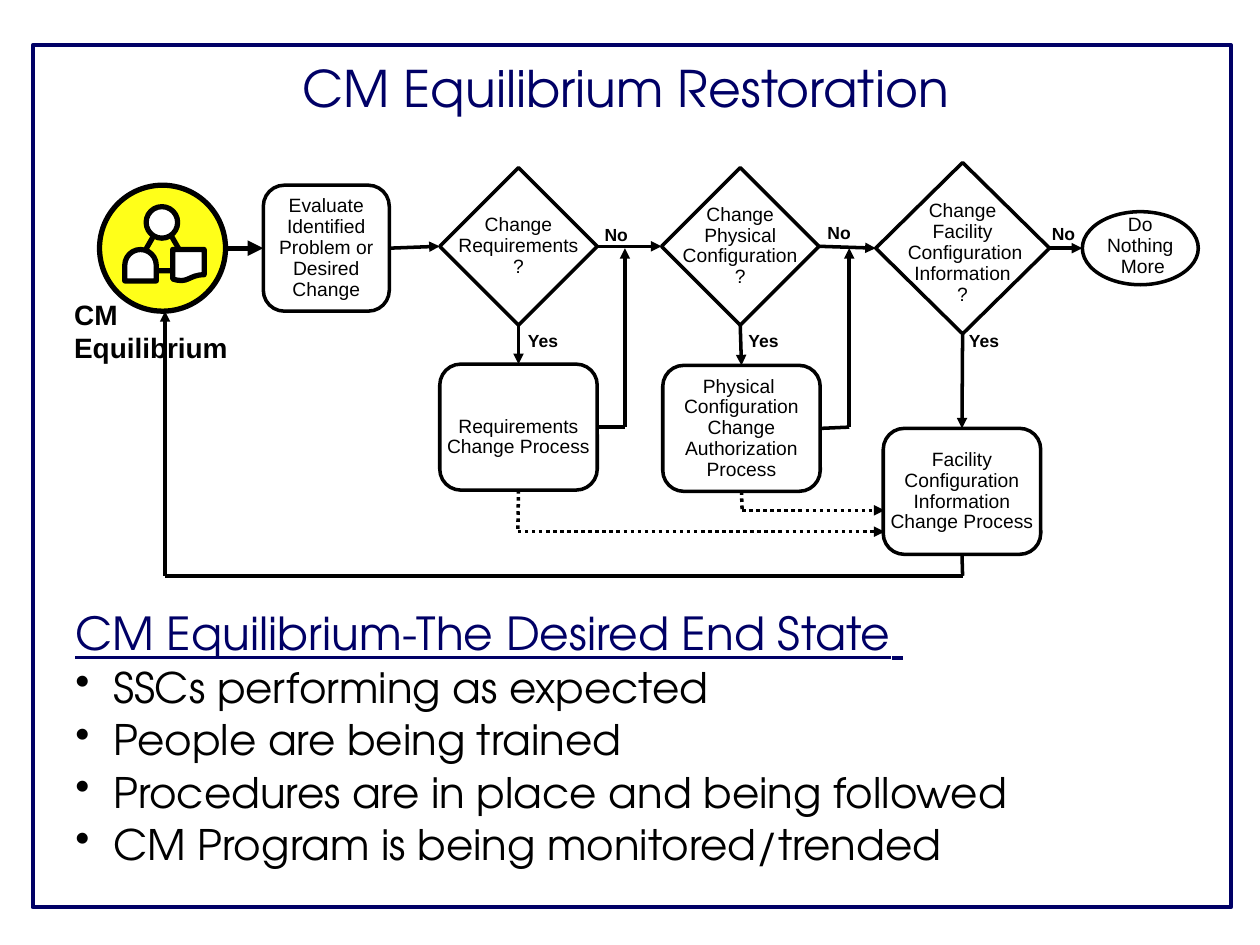
from dataclasses import dataclass
from typing import Any

from lxml import etree
from pptx import Presentation
from pptx import util as u
from pptx.dml.color import RGBColor
from pptx.enum import dml, shapes, text
from pptx.oxml import ns

PX = 9144
NAVY = RGBColor(0x00, 0x00, 0x66)
BLACK = RGBColor(0x00, 0x00, 0x00)
WHITE = RGBColor(0xFF, 0xFF, 0xFF)
YELLOW = RGBColor(0xFF, 0xFF, 0x00)
FORM = shapes.MSO_SHAPE
TOP, LEFT, BOTTOM, RIGHT = range(4)


def add_xml(parent, tag, **attributes):
    """Append a DrawingML element and return it."""
    return etree.SubElement(parent, ns.qn(tag), attributes)


@dataclass
class Diagram:
    """Style and drawing methods for the current slide."""

    slide: Any
    label_font: str = "Arial"
    heading_font: str = "TeX Gyre Adventor"

    def style(self, paragraph, font, size, color, bold=False, underline=False):
        for run in paragraph.runs:
            run.font.name, run.font.size = font, u.Pt(size)
            run.font.bold, run.font.underline = bold, underline
            run.font.color.rgb = color

    def shape(self, form, box, words="", fill=None, line=BLACK, width=2,
              insets=(10, 5, 10, 5), rotation=0):
        shape = self.slide.shapes.add_shape(form, *(n * PX for n in box))
        shape.shadow.inherit = False
        shape.rotation = rotation
        shape.line.color.rgb, shape.line.width = line, u.Pt(width)
        if fill is None:
            shape.fill.background()
        else:
            shape.fill.solid()
            shape.fill.fore_color.rgb = fill
        if words:
            frame = shape.text_frame
            frame.text, frame.word_wrap = words, False
            frame.vertical_anchor = text.MSO_ANCHOR.MIDDLE
            (frame.margin_left, frame.margin_top, frame.margin_right,
             frame.margin_bottom) = (n * PX for n in insets)
            for paragraph in frame.paragraphs:
                paragraph.alignment = text.PP_ALIGN.CENTER
                paragraph.line_spacing = 0.9
                self.style(paragraph, self.label_font, 11, BLACK)
        return shape

    def text(self, box, words, size, font=None, color=BLACK, bold=False,
             align=text.PP_ALIGN.LEFT, anchor=text.MSO_ANCHOR.TOP):
        frame = self.slide.shapes.add_textbox(*(n * PX for n in box)).text_frame
        frame.text, frame.word_wrap = words, True
        frame.vertical_anchor = anchor
        for paragraph in frame.paragraphs:
            paragraph.alignment = align
            self.style(paragraph, font or self.label_font, size, color, bold)
        return frame

    def bullets(self, box, heading, items):
        frame = self.text(box, "\n".join([heading, *items]), 24, self.heading_font)
        title, *points = frame.paragraphs
        self.style(title, self.heading_font, 26, NAVY, underline=True)
        space = title.add_run()
        space.text = " "
        space.font.size, space.font.bold, space.font.underline = u.Pt(24), True, True
        space.font.name, space.font.color.rgb = self.heading_font, NAVY
        for paragraph in frame.paragraphs:
            paragraph.space_before = u.Pt(1.2)
            properties = paragraph._p.get_or_add_pPr()
            properties.set("marL", str(30 * PX))
            properties.set("indent", str(-30 * PX))
            if paragraph in points or paragraph._p is not title._p:
                color = add_xml(properties, "a:buClr")
                add_xml(color, "a:srgbClr", val=str(BLACK))
                add_xml(properties, "a:buChar", char="•")

    def line(self, start, end, width=2, arrow=True, dotted=False):
        """Draw a line between points or (shape, side) pairs."""
        ends = [(0, 0) if hasattr(place[0], "shape_id") else place
                for place in (start, end)]
        connector = self.slide.shapes.add_connector(
            shapes.MSO_CONNECTOR.STRAIGHT, *(n * PX for place in ends for n in place))
        for place, join in ((start, connector.begin_connect),
                            (end, connector.end_connect)):
            if hasattr(place[0], "shape_id"):
                join(*place)
        connector.line.color.rgb, connector.line.width = BLACK, u.Pt(width)
        if dotted:
            connector.line.dash_style = dml.MSO_LINE.ROUND_DOT
        properties = connector._element.spPr
        if arrow:
            add_xml(properties.get_or_add_ln(), "a:tailEnd", type="triangle")
        add_xml(properties, "a:effectLst")

    def route(self, *places, dotted=False, arrow=True):
        """Draw a bent path with an arrowhead on its last leg."""
        legs = list(zip(places, places[1:]))
        for number, (start, end) in enumerate(legs, 1):
            self.line(start, end, arrow=arrow and number == len(legs), dotted=dotted)


def draw_person(diagram):
    """Draw the equilibrium symbol and its caption."""
    circle = diagram.shape(FORM.OVAL, (79, 147, 100, 100), fill=YELLOW, width=3)
    color = circle._element.spPr.find(ns.qn("a:solidFill"))[0]
    add_xml(color, "a:alpha", val="90000")
    diagram.shape(FORM.ISOSCELES_TRIANGLE, (106, 175, 46, 40), width=3)
    for form, left, top, rotation in ((FORM.OVAL, 116, 164, 0),
                                      (FORM.FLOWCHART_DOCUMENT, 137, 198, 0),
                                      (FORM.FLOWCHART_DELAY, 99, 198, 270)):
        diagram.shape(form, (left, top, 25, 25), fill=WHITE, width=3, rotation=rotation)
    diagram.text((49, 231, 145, 64), "CM Equilibrium", 16, bold=True)


def draw_flow(diagram):
    """Draw the steps, decisions and the paths between them."""
    box, choice = FORM.ROUNDED_RECTANGLE, FORM.DIAMOND
    evaluate = diagram.shape(box, (209, 147, 100, 100),
                             "Evaluate\nIdentified\nProblem or\nDesired\nChange")
    requirements = diagram.shape(choice, (349, 133, 125, 125),
                                 "Change\nRequirements\n?")
    physical = diagram.shape(choice, (525, 133, 125, 125),
                             "Change\nPhysical\nConfiguration\n?")
    facility = diagram.shape(choice, (695, 129, 138, 136),
                             "Change\nFacility\n Configuration\nInformation\n?",
                             insets=(0, 8, 0, 0))
    diagram.shape(FORM.OVAL, (859, 168, 92, 58), "Do\nNothing\n More",
                  insets=(10, 2, 10, 5))
    requirements_process = diagram.shape(box, (349, 289, 125, 100),
                                         "Requirements\nChange Process",
                                         insets=(10, 21, 10, 5))
    physical_process = diagram.shape(
        box, (526, 290, 125, 100),
        "Physical \nConfiguration\nChange\nAuthorization\nProcess")
    facility_process = diagram.shape(
        box, (701, 340, 125, 100),
        "Facility\nConfiguration\nInformation\nChange Process")

    diagram.line((179, 197), (evaluate, LEFT), width=3)
    diagram.line((evaluate, RIGHT), (requirements, LEFT))
    diagram.line((requirements, RIGHT), (physical, LEFT))
    diagram.line((physical, RIGHT), (facility, LEFT))
    diagram.line((facility, RIGHT), (859, 197))
    for decision, process in ((requirements, requirements_process),
                              (physical, physical_process),
                              (facility, facility_process)):
        diagram.line((decision, BOTTOM), (process, TOP))
    for process, center, bend, level in ((requirements_process, 411, 496, 422),
                                         (physical_process, 589, 674, 405)):
        diagram.route((process, RIGHT), (bend, 339), (bend, 197))
        diagram.route((process, BOTTOM), (center, level), (702, level), dotted=True)
    diagram.route((facility_process, BOTTOM), (764, 457), (131, 457), (131, 247))

    for word, left, top in (("No", 459, 173), ("No", 636, 171), ("No", 814, 172),
                            ("Yes", 401, 257), ("Yes", 576, 257), ("Yes", 751, 257)):
        diagram.text((left, top, 60, 27), word, 10, bold=True,
                     align=text.PP_ALIGN.CENTER)


def main():
    """Build and save the slide."""
    presentation = Presentation()
    presentation.slide_width, presentation.slide_height = 1000 * PX, 750 * PX
    diagram = Diagram(presentation.slides.add_slide(presentation.slide_layouts[6]))
    diagram.text((230, 40, 633, 58), "CM Equilibrium Restoration", 28.8,
                 diagram.heading_font, NAVY, anchor=text.MSO_ANCHOR.BOTTOM)
    diagram.bullets((50, 475, 900, 225), "CM Equilibrium-The Desired End State",
                    ["SSCs performing as expected", "People are being trained",
                     "Procedures are in place and being followed",
                     "CM Program is being monitored/trended"])
    draw_person(diagram)
    draw_flow(diagram)
    diagram.shape(FORM.RECTANGLE, (26, 36, 951, 684), line=NAVY, width=2.5)
    presentation.save("out.pptx")


if __name__ == "__main__":
    main()
